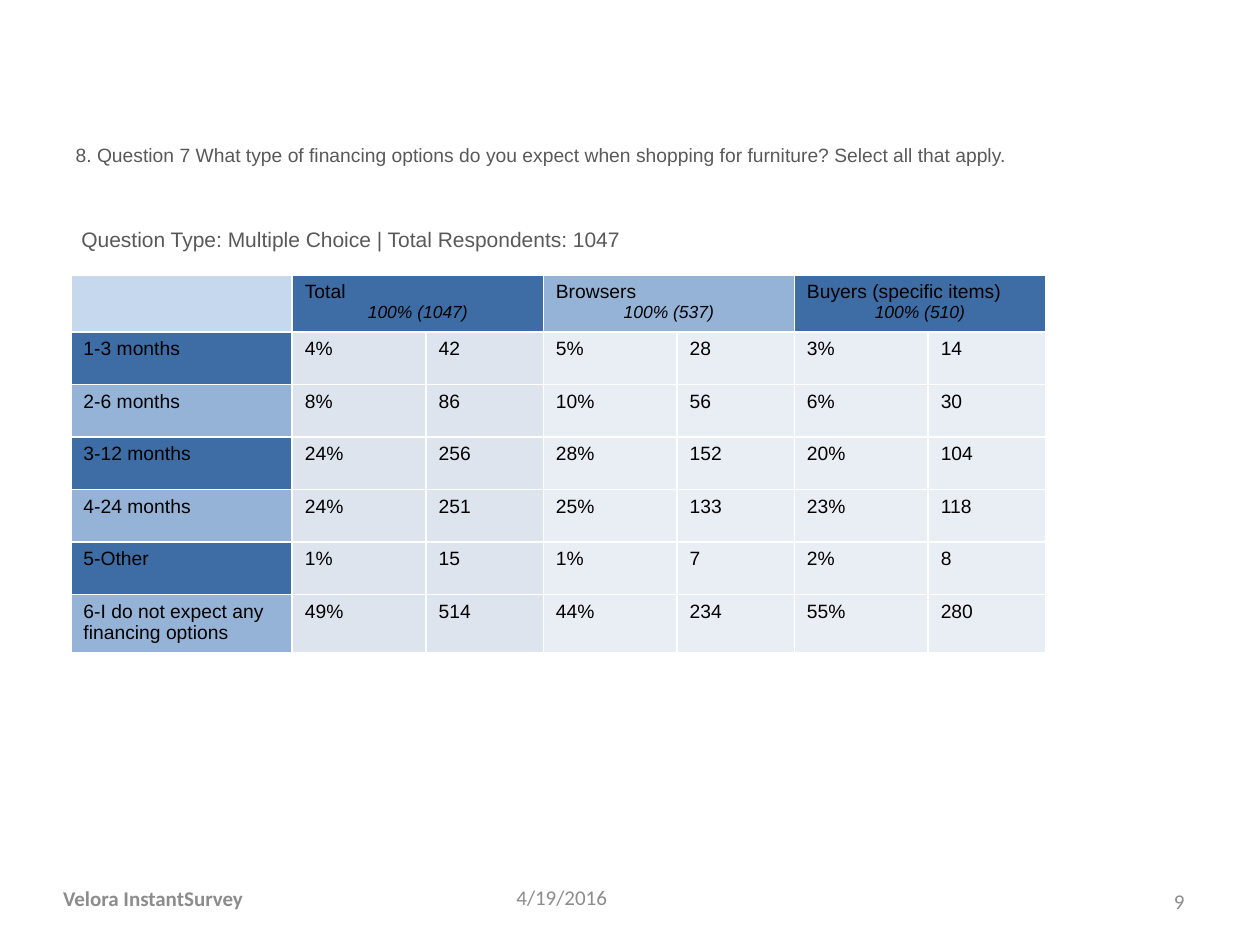
"""Build a survey slide with a table of financing answers by shopper group."""
import dataclasses

import lxml.etree
import pptx
import pptx.dml.color
import pptx.enum.text
import pptx.oxml.ns
import pptx.util

Pt = pptx.util.Pt
Align = pptx.enum.text.PP_ALIGN
Anchor = pptx.enum.text.MSO_ANCHOR
qn = pptx.oxml.ns.qn

HUES = {
    "dark": "3E6CA4",
    "light": "95B3D7",
    "corner": "C5D8ED",
    "total": "DEE4EE",
    "split": "E9EDF4",
    "line": "FFFFFF",
    "black": "000000",
    "head": "595959",
    "foot": "8C8C8C",
}


@dataclasses.dataclass(frozen=True)
class Style:
    """Look of a run."""
    size: float
    hue: str
    font: str = "Arial"
    bold: bool = False
    slant: bool = False


@dataclasses.dataclass(frozen=True)
class Box:
    """Place of a shape in points."""
    left: float
    top: float
    width: float
    height: float


@dataclasses.dataclass(frozen=True)
class Note:
    """Footer text with its place."""
    words: str
    box: Box
    align: Align
    bold: bool = False


@dataclasses.dataclass(frozen=True)
class Group:
    """Column group of the table."""
    name: str
    base: str
    tint: str


@dataclasses.dataclass(frozen=True)
class Answer:
    """Table row with a share and a count for each group."""
    label: str
    values: tuple[str, ...]


TITLE = ("8. Question 7 What type of financing options do you expect "
         "when shopping for furniture? Select all that apply.")
BODY = "Question Type: Multiple Choice | Total Respondents: 1047"
NOTES = (
    Note("4/19/2016", Box(288, 498, 168, 28.8), Align.LEFT),
    Note("Velora InstantSurvey", Box(12, 498, 151, 30), Align.CENTER, True),
    Note("9", Box(516, 500.4, 168, 28.8), Align.RIGHT),
)
GROUPS = (
    Group("Total", "100% (1047)", "total"),
    Group("Browsers", "100% (537)", "split"),
    Group("Buyers (specific items)", "100% (510)", "split"),
)
ANSWERS = (
    Answer("1-3 months", ("4%", "42", "5%", "28", "3%", "14")),
    Answer("2-6 months", ("8%", "86", "10%", "56", "6%", "30")),
    Answer("3-12 months", ("24%", "256", "28%", "152", "20%", "104")),
    Answer("4-24 months", ("24%", "251", "25%", "133", "23%", "118")),
    Answer("5-Other", ("1%", "15", "1%", "7", "2%", "8")),
    Answer("6-I do not expect any financing options",
           ("49%", "514", "44%", "234", "55%", "280")),
)
WIDTHS = (126.5, *(76.5, 67) * len(GROUPS), 20)
ROW = 30
CELL = Style(11, "black")
BASE = Style(10, "black", slant=True)


def shade(name: str) -> pptx.dml.color.RGBColor:
    """Return a named colour."""
    return pptx.dml.color.RGBColor.from_string(HUES[name])


def write(para, words: str, style: Style, align: Align = Align.LEFT) -> None:
    """Add one styled run to a paragraph."""
    para.alignment = align
    run = para.add_run()
    run.text = words
    font = run.font
    font.name, font.size = style.font, Pt(style.size)
    font.bold, font.italic = style.bold, style.slant
    font.color.rgb = shade(style.hue)


def place(shape, box: Box) -> None:
    """Move and size a shape."""
    shape.left, shape.top = Pt(box.left), Pt(box.top)
    shape.width, shape.height = Pt(box.width), Pt(box.height)


def fill_holder(shape, box: Box, words: str, style: Style):
    """Place a title or body and return its paragraph."""
    place(shape, box)
    frame = shape.text_frame
    frame.auto_size = pptx.enum.text.MSO_AUTO_SIZE.NONE
    frame.vertical_anchor = Anchor.TOP
    para = frame.paragraphs[0]
    para.space_before = Pt(0)
    write(para, words, style)
    return para


def add_note(slide, note: Note) -> None:
    """Add a footer text box."""
    box = note.box
    shape = slide.shapes.add_textbox(
        Pt(box.left), Pt(box.top), Pt(box.width), Pt(box.height))
    frame = shape.text_frame
    frame.word_wrap = True
    frame.vertical_anchor = Anchor.MIDDLE
    style = Style(12, "foot", "Calibri", note.bold)
    write(frame.paragraphs[0], note.words, style, note.align)


def rule_cell(cell) -> None:
    """Draw white lines around a cell."""
    props = cell._tc.get_or_add_tcPr()
    for spot, side in enumerate(("lnL", "lnR", "lnT", "lnB")):
        line = lxml.etree.Element(qn(f"a:{side}"), w=str(Pt(1)))
        solid = lxml.etree.SubElement(line, qn("a:solidFill"))
        lxml.etree.SubElement(solid, qn("a:srgbClr"), val=HUES["line"])
        props.insert(spot, line)


def paint(cell, hue: str, words: str = "") -> None:
    """Fill a cell and write its text."""
    cell.fill.solid()
    cell.fill.fore_color.rgb = shade(hue)
    if words:
        write(cell.text_frame.paragraphs[0], words, CELL)


def add_grid(slide) -> None:
    """Add the table of answers."""
    count = len(ANSWERS) + 1
    grid = slide.shapes.add_table(
        count, len(WIDTHS), Pt(40.5), Pt(157.2),
        Pt(sum(WIDTHS)), Pt(ROW * count)).table
    grid.first_row = grid.horz_banding = False
    for col, width in zip(grid.columns, WIDTHS):
        col.width = Pt(width)
    for row in grid.rows:
        row.height = Pt(ROW)
    for cell in grid.iter_cells():
        cell.fill.background()
        rule_cell(cell)
    paint(grid.cell(0, 0), "corner")
    bands = ("dark", "light")
    for spot, group in enumerate(GROUPS):
        left = 1 + 2 * spot
        cell = grid.cell(0, left)
        cell.merge(grid.cell(0, left + 1))
        paint(cell, bands[spot % 2], group.name)
        write(cell.text_frame.add_paragraph(), group.base, BASE, Align.CENTER)
    for spot, answer in enumerate(ANSWERS):
        paint(grid.cell(spot + 1, 0), bands[spot % 2], answer.label)
        for col, value in enumerate(answer.values):
            paint(grid.cell(spot + 1, col + 1), GROUPS[col // 2].tint, value)


def main() -> None:
    """Build and save the slide."""
    deck = pptx.Presentation()
    deck.slide_width, deck.slide_height = Pt(720), Pt(540)
    slide = deck.slides.add_slide(deck.slide_layouts[1])
    fill_holder(slide.shapes.title, Box(36, 78, 648, 42), TITLE,
                Style(11, "head"))
    para = fill_holder(slide.placeholders[1], Box(36, 126, 648, 30), BODY,
                       Style(12, "head"))
    props = para._p.get_or_add_pPr()
    props.set("marL", str(Pt(3.3)))
    props.set("indent", "0")
    lxml.etree.SubElement(props, qn("a:buNone"))
    for note in NOTES:
        add_note(slide, note)
    add_grid(slide)
    deck.save("out.pptx")


if __name__ == "__main__":
    main()
